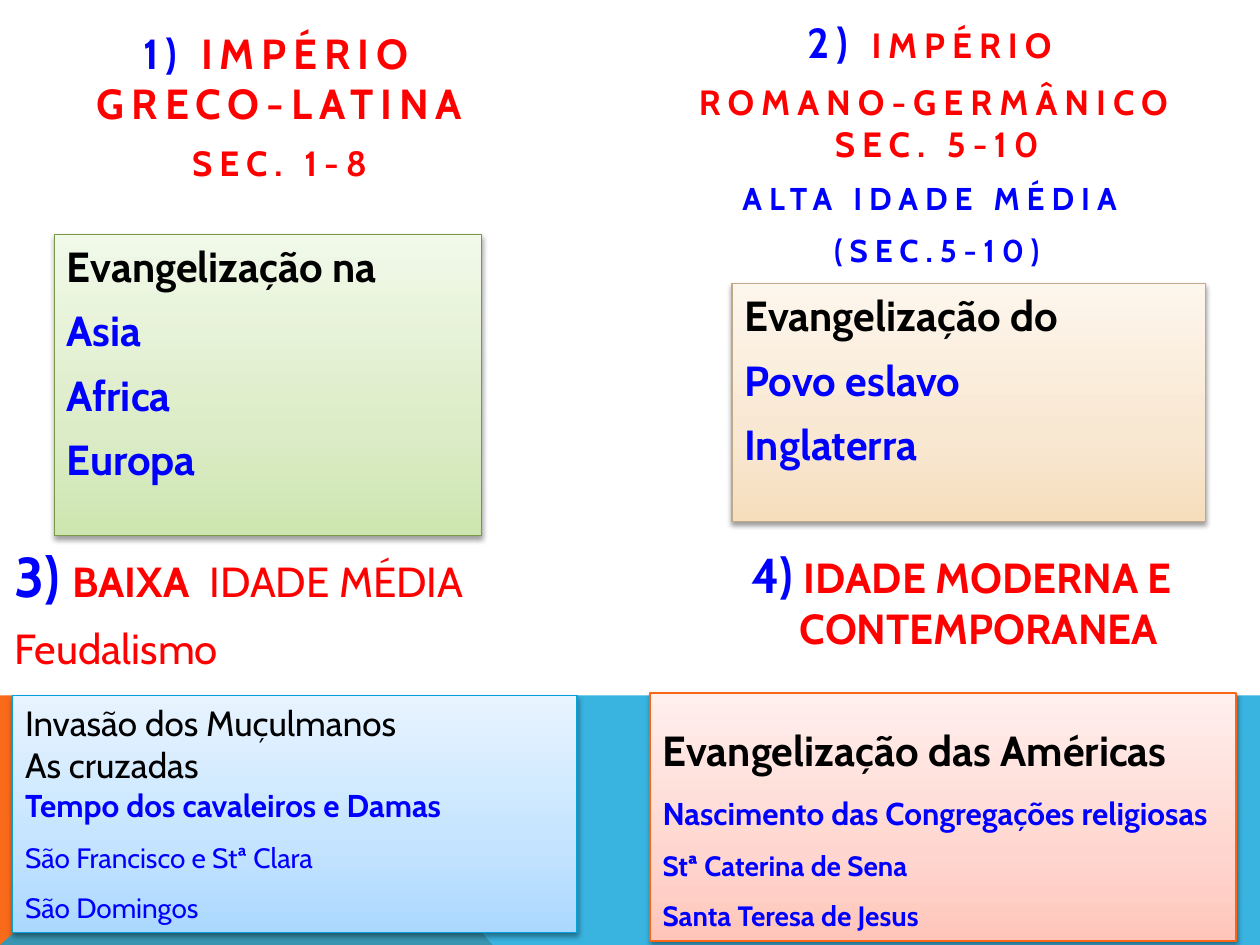
import dataclasses

import pptx
import pptx.dml.color
import pptx.enum.shapes
import pptx.enum.text
import pptx.oxml
import pptx.oxml.ns
import pptx.util

Pt = pptx.util.Pt
RGB = pptx.dml.color.RGBColor.from_string
ALIGN = pptx.enum.text.PP_ALIGN
ANCHOR = pptx.enum.text.MSO_ANCHOR
NS = pptx.oxml.ns.nsdecls("a")


@dataclasses.dataclass(frozen=True)
class Theme:
    font: str = "Cabin"
    black: str = "000000"
    blue: str = "0000FF"
    red: str = "FF0000"
    orange_band: str = "F96A1B"
    blue_band: str = "08A1D9"
    # Each panel: gradient from bottom to top, then outline
    green: tuple = ("CDE6AF", "DCECC7", "F1F9E9", "7A9746")
    sand: tuple = ("F6DEBD", "F8E7D1", "FDF6EC", "BFA989")
    sky: tuple = ("ABD8FF", "C3E3FF", "E8F4FF", "03A0D9")
    rose: tuple = ("FFC5BA", "FFD6CF", "FFEFED", "F96615")
    huge: int = 32
    large: int = 28
    heading: int = 24
    medium: int = 20
    body: int = 18
    small: int = 16


T = Theme()


def style_panel(sp, colors):
    """Give a panel its three-stop gradient, thin outline and soft shadow."""
    *stops, outline = colors
    gs = "".join(
        f'<a:gs pos="{pos}"><a:srgbClr val="{color}"/></a:gs>'
        for pos, color in zip((0, 35000, 100000), stops)
    )
    sp.fill.background()
    no_fill = sp._element.spPr.find(pptx.oxml.ns.qn("a:noFill"))
    no_fill.getparent().replace(no_fill, pptx.oxml.parse_xml(
        f'<a:gradFill {NS} rotWithShape="1"><a:gsLst>{gs}</a:gsLst>'
        '<a:lin ang="16200000" scaled="0"/></a:gradFill>'))
    sp.line.color.rgb = RGB(outline)
    sp.line.width = Pt(0.75)
    sp.shadow.inherit = False
    effects = sp._element.spPr.find(pptx.oxml.ns.qn("a:effectLst"))
    effects.append(pptx.oxml.parse_xml(
        f'<a:outerShdw {NS} blurRad="{Pt(3.1)}" dist="{Pt(1.6)}" dir="5400000" rotWithShape="0">'
        '<a:srgbClr val="000000"><a:alpha val="38000"/></a:srgbClr></a:outerShdw>'))


def write(tf, paragraphs, align=ALIGN.LEFT, before=0, hanging=0, spacing=0):
    """Fill a frame; runs are (text, size, color, bold[, letter spacing])."""
    tf.word_wrap = True
    for i, runs in enumerate(paragraphs):
        p = tf.paragraphs[0] if i == 0 else tf.add_paragraph()
        p.alignment = align
        p.space_before = Pt(before)
        p.font.name = T.font
        if hanging:
            pPr = p._p.get_or_add_pPr()
            pPr.set("marL", str(Pt(hanging)))
            pPr.set("indent", str(Pt(-hanging)))
        for text, size, color, bold, *own_spacing in runs:
            r = p.add_run()
            r.text = text
            font = p.font if len(runs) == 1 else r.font
            font.size = Pt(size)
            font.bold = bold
            font.color.rgb = RGB(color)
            letter_spacing = own_spacing[0] if own_spacing else spacing
            if letter_spacing:
                r._r.get_or_add_rPr().set("spc", str(letter_spacing * 100))


prs = pptx.Presentation()
prs.slide_width, prs.slide_height = Pt(720), Pt(540)
s = prs.slides.add_slide(prs.slide_layouts[6])

# Coloured bands along the bottom
bands = [
    (T.orange_band, [(0, 540), (0, 397.4), (160.6, 397.4), (281.5, 540)]),
    (T.blue_band, [(0, 540), (160.6, 397.4), (720, 397.4), (720, 540)]),
]
for color, points in bands:
    fb = s.shapes.build_freeform(*[Pt(v) for v in points[0]], scale=1.0)
    fb.add_line_segments([(Pt(x), Pt(y)) for x, y in points[1:]], close=True)
    sp = fb.convert_to_shape()
    sp.fill.solid()
    sp.fill.fore_color.rgb = RGB(color)
    sp.line.fill.background()
    sp.shadow.inherit = False
    if color == T.blue_band:
        clr = sp._element.spPr.find(".//" + pptx.oxml.ns.qn("a:srgbClr"))
        clr.append(pptx.oxml.parse_xml(f'<a:alpha {NS} val="80000"/>'))

# Letter-spaced headings of the upper half: box, bottom inset, paragraphs
upper_headings = [
    ((22.3, 15.1, 275, 126), 36, [
        [("1) ", T.heading, T.blue, True), ("IMPÉRIO GRECO-LATINA", T.heading, T.red, True)],
        [("SEC. 1-8", T.medium, T.red, True)],
    ]),
    ((366.5, 9.4, 337.7, 147.6), 3.6, [
        [("2) ", T.heading, T.blue, True), ("IMPÉRIO ", T.medium, T.red, True)],
        [("ROMANO-GERMÂNICO SEC. 5-10", T.medium, T.red, True)],
        [("ALTA IDADE MÉDIA", T.body, T.blue, True), (" ", T.body, T.blue, True, 13)],
        [("(SEC.5-10)", T.body, T.blue, True)],
    ]),
]
for box, inset, paragraphs in upper_headings:
    tf = s.shapes.add_textbox(*[Pt(v) for v in box]).text_frame
    tf.vertical_anchor = ANCHOR.BOTTOM
    tf.margin_bottom = Pt(inset)
    write(tf, paragraphs, align=ALIGN.CENTER, before=8, spacing=4)

# Headings of the lower half
lower_headings = [
    ((1.4, 306, 411.1, 231.1), [
        [("3) ", T.huge, T.blue, True), ("BAIXA", T.heading, T.red, True),
         (" ", T.heading, T.red, True, 6), ("IDADE MÉDIA", T.heading, T.red, False)],
        [("Feudalismo", T.heading, T.red, False)],
    ]),
    ((422.6, 307.4, 280.8, 229.7), [
        [("4) ", T.large, T.blue, True),
         ("IDADE MODERNA E CONTEMPORANEA", T.heading, T.red, True)],
    ]),
]
for box, paragraphs in lower_headings:
    tf = s.shapes.add_textbox(*[Pt(v) for v in box]).text_frame
    write(tf, paragraphs, before=8, hanging=27.4)

# Panels: box, colours, space before, hanging indent, paragraphs from 1.5 spacing on, lines
panels = [
    ((31, 133.9, 244.1, 172.1), T.green, 8, 27.4, None, [
        ("Evangelização na", T.heading, T.black, True),
        ("Asia", T.heading, T.blue, True),
        ("Africa", T.heading, T.blue, True),
        ("Europa", T.heading, T.blue, True),
    ]),
    ((418.3, 162, 270.7, 136.1), T.sand, 8, 27.4, None, [
        ("Evangelização do", T.heading, T.black, True),
        ("Povo eslavo", T.heading, T.blue, True),
        ("Inglaterra", T.heading, T.blue, True),
    ]),
    ((7.2, 397.4, 322.6, 135.4), T.sky, 0, 0, 3, [
        ("Invasão dos Muçulmanos", T.medium, T.black, False),
        ("As cruzadas", T.medium, T.black, False),
        ("Tempo dos cavaleiros e Damas", T.body, T.blue, True),
        ("São Francisco e Stª Clara", T.small, T.blue, False),
        ("São Domingos", T.small, T.blue, False),
    ]),
    ((371.5, 396, 334.8, 141.8), T.rose, 0, 0, 0, [
        ("Evangelização das Américas", T.heading, T.black, True),
        ("Nascimento das Congregações religiosas", T.body, T.blue, True),
        ("Stª Caterina de Sena", T.small, T.blue, True),
        ("Santa Teresa de Jesus", T.small, T.blue, True),
    ]),
]
for box, colors, before, hanging, wide_from, lines in panels:
    sp = s.shapes.add_shape(pptx.enum.shapes.MSO_SHAPE.RECTANGLE, *[Pt(v) for v in box])
    style_panel(sp, colors)
    tf = sp.text_frame
    tf.vertical_anchor = ANCHOR.TOP
    write(tf, [[line] for line in lines], before=before, hanging=hanging)
    if wide_from is not None:
        tf.auto_size = pptx.enum.text.MSO_AUTO_SIZE.SHAPE_TO_FIT_TEXT
        for p in tf.paragraphs[wide_from:]:
            p.line_spacing = 1.5

prs.save("out.pptx")
